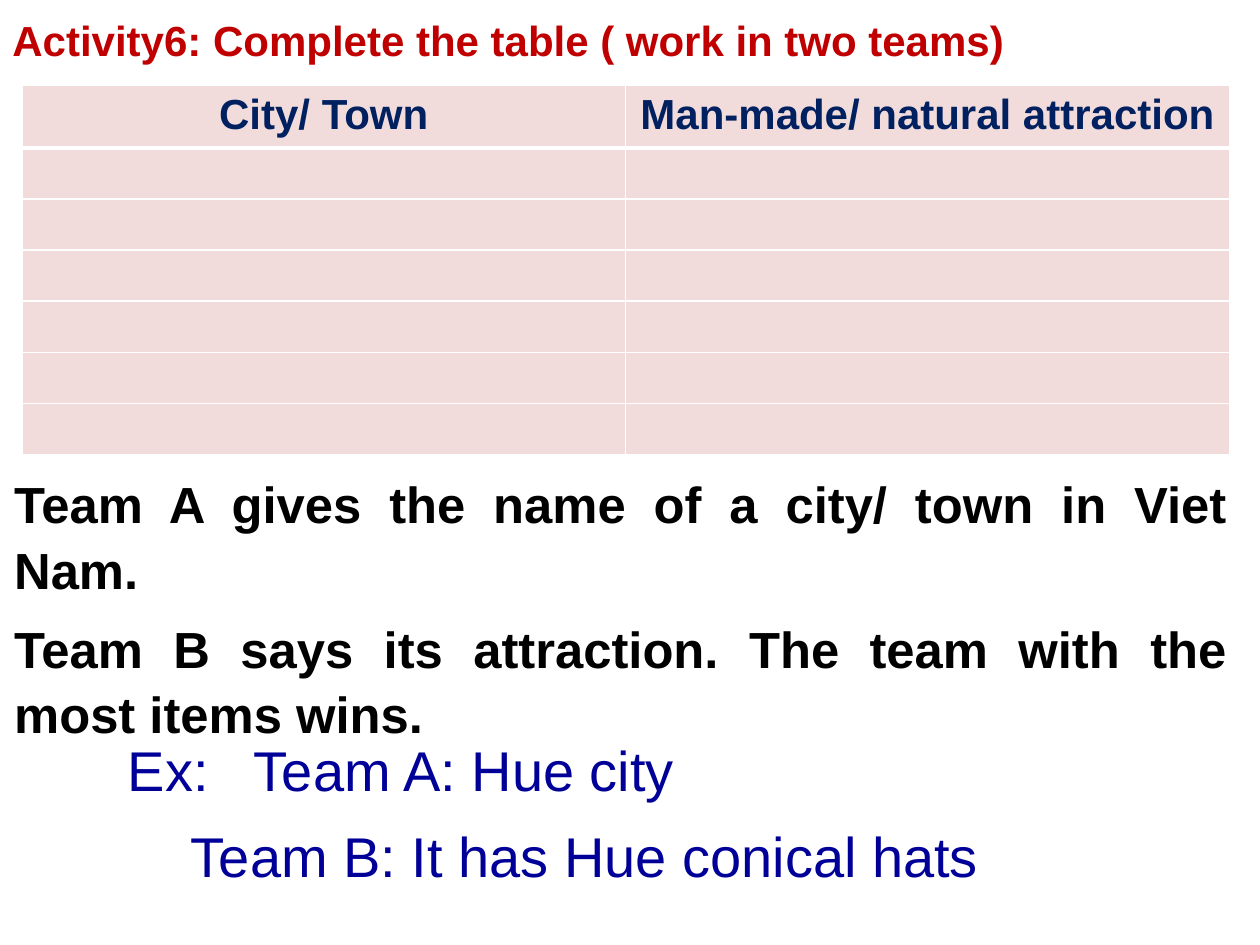
from dataclasses import dataclass

from lxml.etree import SubElement
from pptx import Presentation
from pptx.dml.color import RGBColor
from pptx.enum.text import MSO_ANCHOR, PP_ALIGN
from pptx.oxml.ns import qn
from pptx.util import Pt


@dataclass(frozen=True)
class Theme:
    font: str = "Arial"
    title: str = "C00000"
    header: str = "002060"
    body: str = "000000"
    example: str = "000099"
    cell: str = "F2DCDB"
    border: str = "FFFFFF"
    title_size: int = 24
    body_size: int = 29
    example_size: int = 32


theme = Theme()


def style(p, size, color, bold, align):
    p.alignment = align
    p.font.name = theme.font
    p.font.size = Pt(size)
    p.font.bold = bold
    p.font.color.rgb = RGBColor.from_string(color)


def add_border(cell, side, width):
    ln = SubElement(cell._tc.get_or_add_tcPr(), qn(f"a:ln{side}"), w=str(Pt(width)))
    fill = SubElement(ln, qn("a:solidFill"))
    SubElement(fill, qn("a:srgbClr"), val=theme.border)


prs = Presentation()
prs.slide_width, prs.slide_height = Pt(720), Pt(540)
s = prs.slides.add_slide(prs.slide_layouts[6])

# Title, instructions and example: box, size, colour, bold, lines
texts = [
    ((0, 3, 708, 38), theme.title_size, theme.title, True,
     ["Activity6: Complete the table ( work in two teams)"]),
    ((1, 264.5, 708, 125), theme.body_size, theme.body, True,
     ["Team A gives the name of a city/ town in Viet Nam. ",
      "Team B says its attraction. The team with the most items wins."]),
    ((66, 414, 558, 98.5), theme.example_size, theme.example, False,
     ["Ex: \tTeam A: Hue city", "\tTeam B: It has Hue conical hats"]),
]
for box, size, color, bold, lines in texts:
    tf = s.shapes.add_textbox(*map(Pt, box)).text_frame
    tf.word_wrap = True
    tf.vertical_anchor = MSO_ANCHOR.TOP
    tf.text = "\n".join(lines)
    for p in tf.paragraphs:
        style(p, size, color, bold, PP_ALIGN.JUSTIFY)
        p.line_spacing = 1.07
        p.space_after = Pt(8)

# Table to fill in: a header and six empty rows
headers = ["City/ Town", "Man-made/ natural attraction"]
header_height, row_height, empty_rows = 36, 29.2, 6
table = s.shapes.add_table(
    empty_rows + 1, len(headers), Pt(12.5), Pt(48.5), Pt(690),
    Pt(header_height + empty_rows * row_height)).table
for i, row in enumerate(table.rows):
    row.height = Pt(row_height if i else header_height)
    for cell in row.cells:
        for side in "LRTB":
            heavy = (i, side) in [(0, "B"), (1, "T")]
            add_border(cell, side, 3 if heavy else 1)
        cell.fill.solid()
        cell.fill.fore_color.rgb = RGBColor.from_string(theme.cell)
for cell, header in zip(table.rows[0].cells, headers):
    cell.text = header
    style(cell.text_frame.paragraphs[0], theme.title_size, theme.header, True,
          PP_ALIGN.CENTER)

prs.save("out.pptx")
